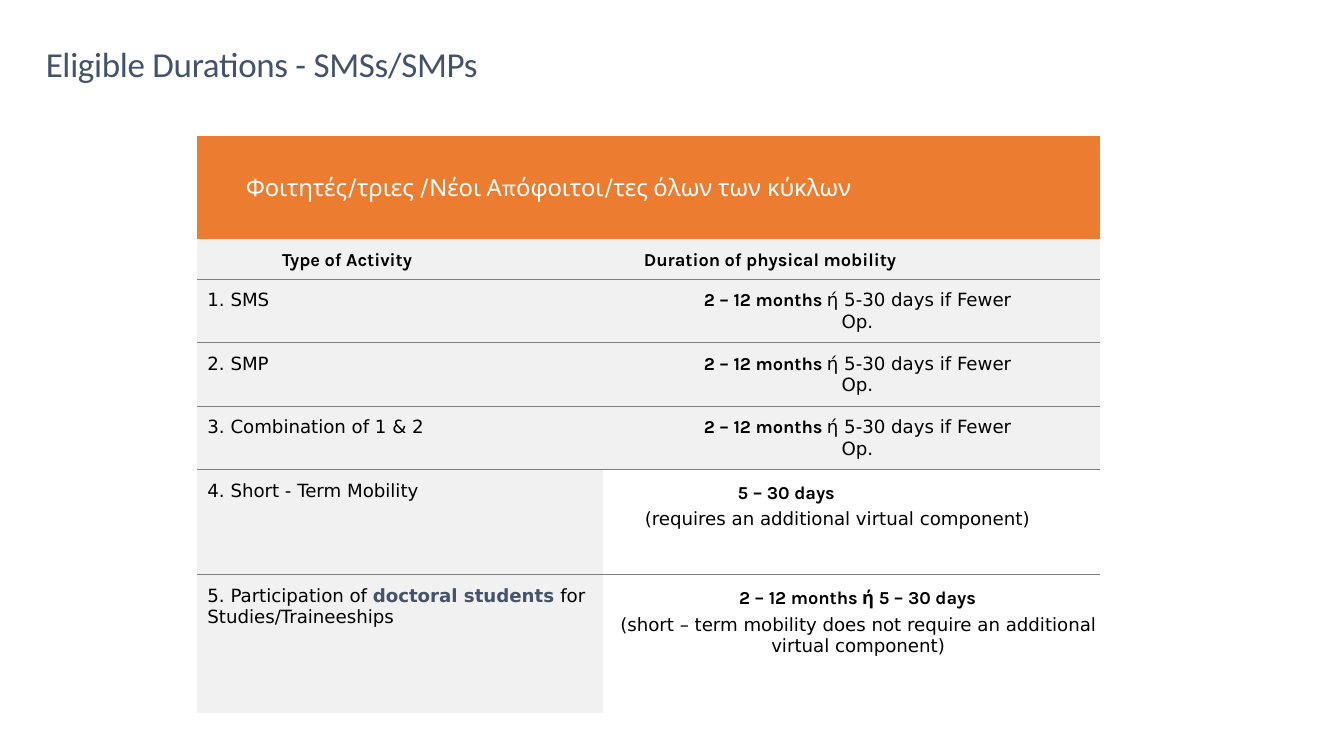
from lxml import etree
from pptx import Presentation
from pptx.dml.color import RGBColor
from pptx.enum import text as t
from pptx.oxml import parse_xml
from pptx.util import Pt

NS = "http://schemas.openxmlformats.org/drawingml/2006/main"
SANS, KARLA = "DejaVu Sans", "Karla"
BLACK, SLATE, GREY = "000000", "44536A", "F1F1F1"
LEFT, MID = t.PP_ALIGN.LEFT, t.PP_ALIGN.CENTER


def tint(obj, code):
    obj.rgb = RGBColor.from_string(code)


def write(par, runs, size, align=LEFT, indent=0, before=0, line=None):
    """Each run is (text, font, bold, colour, letter spacing)."""
    par.alignment = align
    par.space_before = Pt(before)
    if line:
        par.line_spacing = line
    props = par._p.get_or_add_pPr()
    props.set("marL", str(Pt(indent)))
    props.set("indent", "0")
    for words, face, bold, code, gap in runs:
        run = par.add_run()
        run.text = words
        run.font.name, run.font.size, run.font.bold = face, Pt(size), bold
        tint(run.font.color, code)
        if gap:
            run._r.get_or_add_rPr().set("spc", str(gap))


prs = Presentation()
prs.slide_width, prs.slide_height = Pt(960), Pt(540)
slide = prs.slides.add_slide(prs.slide_layouts[5])

# Title
title = slide.shapes.title
title.left, title.top, title.width, title.height = Pt(31.7), Pt(28.8), Pt(331), Pt(32.4)
frame = title.text_frame
frame.margin_left = frame.margin_right = frame.margin_bottom = 0
frame.margin_top = Pt(10)
frame.vertical_anchor = t.MSO_ANCHOR.TOP
frame.auto_size = t.MSO_AUTO_SIZE.SHAPE_TO_FIT_TEXT
write(frame.paragraphs[0], [("Eligible Durations - SMSs/SMPs", "Calibri", False, SLATE, -20)],
      25, indent=1, before=9.9, line=0.7)

# Cell text: each paragraph is (runs, align, indent, space before, line spacing)
def_run = (SANS, False, BLACK, 0)
bold_run = (KARLA, True, BLACK, 0)
months = [
    ([("2 – 12 months ", *bold_run), ("ή 5-30 days if Fewer", *def_run)], MID, 8.6, 7.8, None),
    ([("Op.", *def_run)], MID, 8.6, 0, None),
]
heads = [[([(words, *bold_run)], LEFT, indent, 7.8, None)]
         for words, indent in (("Type of Activity", 60.5), ("Duration of physical mobility", 29.5))]
rows = [heads]
for words in ("1. SMS", "2. SMP", "3. Combination of 1 & 2"):
    rows.append([[([(words, *def_run)], LEFT, 7.2, 7.8, None)], months])
rows.append([
    [([("4. Short - Term Mobility", *def_run)], LEFT, 7.2, 7.9, None)],
    [([("5 – 30 days", *bold_run)], LEFT, 96.5, 9.2, None),
     ([("(requires an additional virtual component)", *def_run)], LEFT, 30.2, 0, 1.22)],
])
rows.append([
    [([("5. Participation of ", *def_run), ("doctoral students ", SANS, True, SLATE, 0),
       ("for Studies/Traineeships", *def_run)], LEFT, 7.2, 7.9, None)],
    [([("2 – 12 months ή 5 – 30 days", *bold_run)], MID, 8.6, 9.2, None),
     ([("(short – term mobility does not require an additional virtual component)", *def_run)],
      MID, 9.4, 4.3, None)],
])

# Table frame without a banded style
high = [74.2, 28.5, 45.3, 45.3, 45.3, 75.2, 98.8]
wide = [289.4, 355.6]
shape = slide.shapes.add_table(len(high), 2, Pt(141), Pt(96.8), Pt(sum(wide)), Pt(sum(high)))
table = shape.table
table.first_row = table.horz_banding = False
style = table._tbl.tblPr.find(f"{{{NS}}}tableStyleId")
style.text = "{2D5ABB26-0587-4C30-8999-92F81FD0307C}"
for col, size in zip(table.columns, wide):
    col.width = Pt(size)
for row, size in zip(table.rows, high):
    row.height = Pt(size)

# Orange banner
banner = table.cell(0, 0)
banner.merge(table.cell(0, 1))
banner.fill.solid()
tint(banner.fill.fore_color, "EC7C30")
banner.margin_left = banner.margin_right = banner.margin_bottom = 0
banner.margin_top = Pt(2)
banner.vertical_anchor = t.MSO_ANCHOR.MIDDLE
write(banner.text_frame.paragraphs[0],
      [("Φοιτητές/τριες /Νέοι Απόφοιτοι/τες ", KARLA, False, "FFFFFF", -10),
       ("όλων των ", KARLA, False, "FFFFFF", 0),
       ("κύκλων", KARLA, False, "FFFFFF", -10)], 17, indent=34.6)

# Body cells with rules between the rows
last = len(rows)
for r, row in enumerate(rows, 1):
    for c, pars in enumerate(row):
        cell = table.cell(r, c)
        plain = c == 1 and r >= last - 1
        cell.margin_left = cell.margin_right = cell.margin_bottom = 0
        cell.margin_top = Pt(9.3 if plain else 7.8)
        if plain:
            cell.fill.background()
        else:
            cell.fill.solid()
            tint(cell.fill.fore_color, GREY)
        for i, (runs, align, indent, before, line) in enumerate(pars):
            par = cell.text_frame.paragraphs[0] if i == 0 else cell.text_frame.add_paragraph()
            write(par, runs, 13, align, indent, before, line)
        for tag, shown in (("lnB", r < last), ("lnT", r > 1)):
            if shown:
                edge = parse_xml(
                    f'<a:{tag} xmlns:a="{NS}" w="{Pt(0.75)}"><a:solidFill>'
                    f'<a:srgbClr val="7E7E7E"/></a:solidFill></a:{tag}>')
                cell._tc.get_or_add_tcPr().insert(0, edge)

prs.save("out.pptx")
